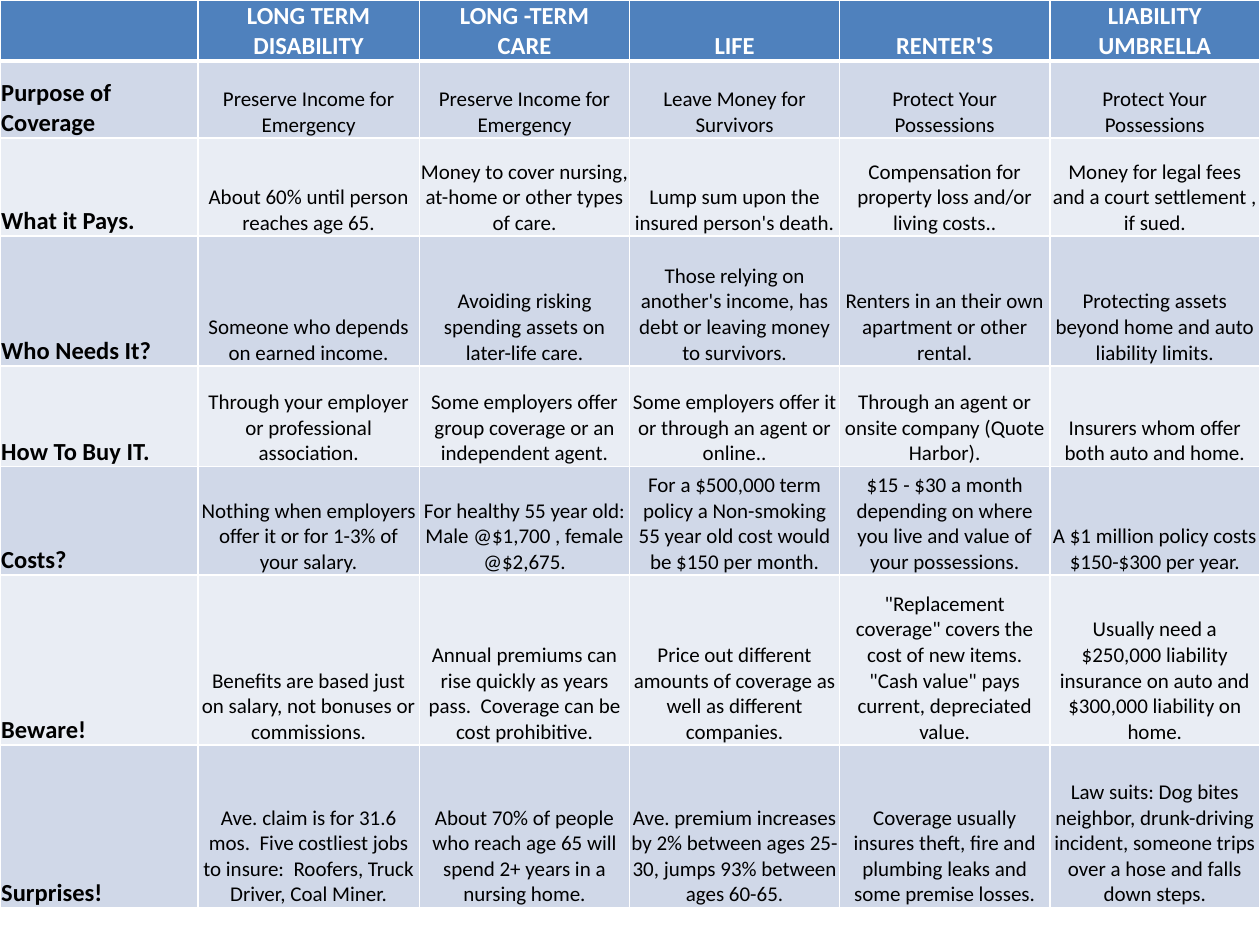
from lxml.etree import SubElement
from pptx import Presentation
from pptx.dml.color import RGBColor
from pptx.enum.text import MSO_ANCHOR, PP_ALIGN
from pptx.oxml.ns import qn
from pptx.util import Inches, Pt

HEADERS = ["", "LONG TERM\nDISABILITY", "LONG -TERM\nCARE", "LIFE", "RENTER'S",
           "LIABILITY\nUMBRELLA"]
ROWS = [
    ["Purpose of Coverage",
     "Preserve Income for Emergency",
     "Preserve Income for Emergency",
     "Leave Money for Survivors",
     "Protect Your Possessions",
     "Protect Your Possessions"],
    ["What it Pays.",
     "About 60% until person reaches age 65.",
     "Money to cover nursing, at-home or other types of care.",
     "Lump sum upon the insured person's death.",
     "Compensation for property loss and/or living costs..",
     "Money for legal fees and a court settlement , if sued."],
    ["Who Needs It?",
     "Someone who depends on earned income.",
     "Avoiding risking spending assets on later-life care.",
     "Those relying on another's income, has debt or leaving money to survivors.",
     "Renters in an their own apartment or other rental.",
     "Protecting assets beyond home and auto liability limits."],
    ["How To Buy IT.",
     "Through your employer or professional association.",
     "Some employers offer group coverage or an independent agent.",
     "Some employers offer it or through an agent or online..",
     "Through an agent or onsite company (Quote Harbor).",
     "Insurers whom offer both auto and home."],
    ["Costs?",
     "Nothing when employers offer it or for 1-3% of your salary.",
     "For healthy 55 year old: Male @$1,700 , female @$2,675.",
     "For a $500,000 term policy a Non-smoking 55 year old cost would be $150 per month.",
     "$15 - $30 a month depending on where you live and value of your possessions.",
     "A $1 million policy costs $150-$300 per year."],
    ["Beware!",
     "Benefits are based just on salary, not bonuses or commissions.",
     "Annual premiums can rise quickly as years pass.  Coverage can be cost prohibitive.",
     "Price out different amounts of coverage as well as different companies.",
     "\"Replacement coverage\" covers the cost of new items. "
     "\"Cash value\" pays current, depreciated value.",
     "Usually need a $250,000 liability insurance on auto and $300,000 liability on home."],
    ["Surprises!",
     "Ave. claim is for 31.6 mos.  Five costliest jobs to insure:  "
     "Roofers, Truck Driver, Coal Miner.",
     "About 70% of people who reach age 65 will spend 2+ years in a nursing home.",
     "Ave. premium increases by 2% between ages 25-30, jumps 93% between ages 60-65.",
     "Coverage usually insures theft, fire and plumbing leaks and some premise losses.",
     "Law suits: Dog bites neighbor, drunk-driving incident, someone trips over a hose "
     "and falls down steps."],
]
SLIDE_WIDTH, SLIDE_HEIGHT = 10, 7.5
LABEL_WIDTH, DISABILITY_WIDTH = 1.57, 1.76
ROW_HEIGHTS = [0.48, 0.61, 0.78, 1.03, 0.8, 0.86, 1.35, 1.29]
HEADER_FILL, BAND_FILLS = "4F81BD", ["D0D8E8", "E9EDF4"]
WHITE, BLACK = "FFFFFF", "000000"


def color(hex_value):
    return RGBColor.from_string(hex_value)


def set_borders(cell, bottom_width):
    """Draw white cell borders, 1 pt except at the bottom."""
    properties = cell._tc.get_or_add_tcPr()
    widths = {"a:lnL": 1, "a:lnR": 1, "a:lnT": 1, "a:lnB": bottom_width}
    for position, (tag, width) in enumerate(widths.items()):
        line = SubElement(properties, qn(tag), w=str(Pt(width)))
        SubElement(SubElement(line, qn("a:solidFill")), qn("a:srgbClr"), val=WHITE)
        properties.insert(position, line)


def fill_cell(cell, text, row, column):
    is_header, is_label = row == 0, column == 0
    cell.margin_left = cell.margin_right = cell.margin_top = Inches(0.01)
    cell.margin_bottom = 0
    cell.vertical_anchor = MSO_ANCHOR.BOTTOM
    cell.fill.solid()
    cell.fill.fore_color.rgb = color(HEADER_FILL if is_header else BAND_FILLS[(row - 1) % 2])
    set_borders(cell, 3 if is_header else 1)
    cell.text_frame.text = text
    for paragraph in cell.text_frame.paragraphs:
        paragraph.alignment = PP_ALIGN.LEFT if is_label else PP_ALIGN.CENTER
        for run in paragraph.runs:
            run.font.name = "Calibri"
            run.font.size = Pt(14 if is_header or is_label else 12)
            run.font.bold = is_header or is_label
            run.font.color.rgb = color(WHITE if is_header else BLACK)


def main():
    presentation = Presentation()
    presentation.slide_width = Inches(SLIDE_WIDTH)
    presentation.slide_height = Inches(SLIDE_HEIGHT)
    slide = presentation.slides.add_slide(presentation.slide_layouts[6])

    contents = [HEADERS] + ROWS
    table = slide.shapes.add_table(len(contents), len(HEADERS), 0, 0, Inches(SLIDE_WIDTH),
                                   Inches(sum(ROW_HEIGHTS))).table
    other_count = len(HEADERS) - 2
    other_width = (SLIDE_WIDTH - LABEL_WIDTH - DISABILITY_WIDTH) / other_count
    widths = [LABEL_WIDTH, DISABILITY_WIDTH] + [other_width] * other_count
    for column, width in zip(table.columns, widths):
        column.width = Inches(width)
    for row, height in zip(table.rows, ROW_HEIGHTS):
        row.height = Inches(height)
    for row, texts in enumerate(contents):
        for column, text in enumerate(texts):
            fill_cell(table.cell(row, column), text, row, column)

    presentation.save("out.pptx")


if __name__ == "__main__":
    main()
